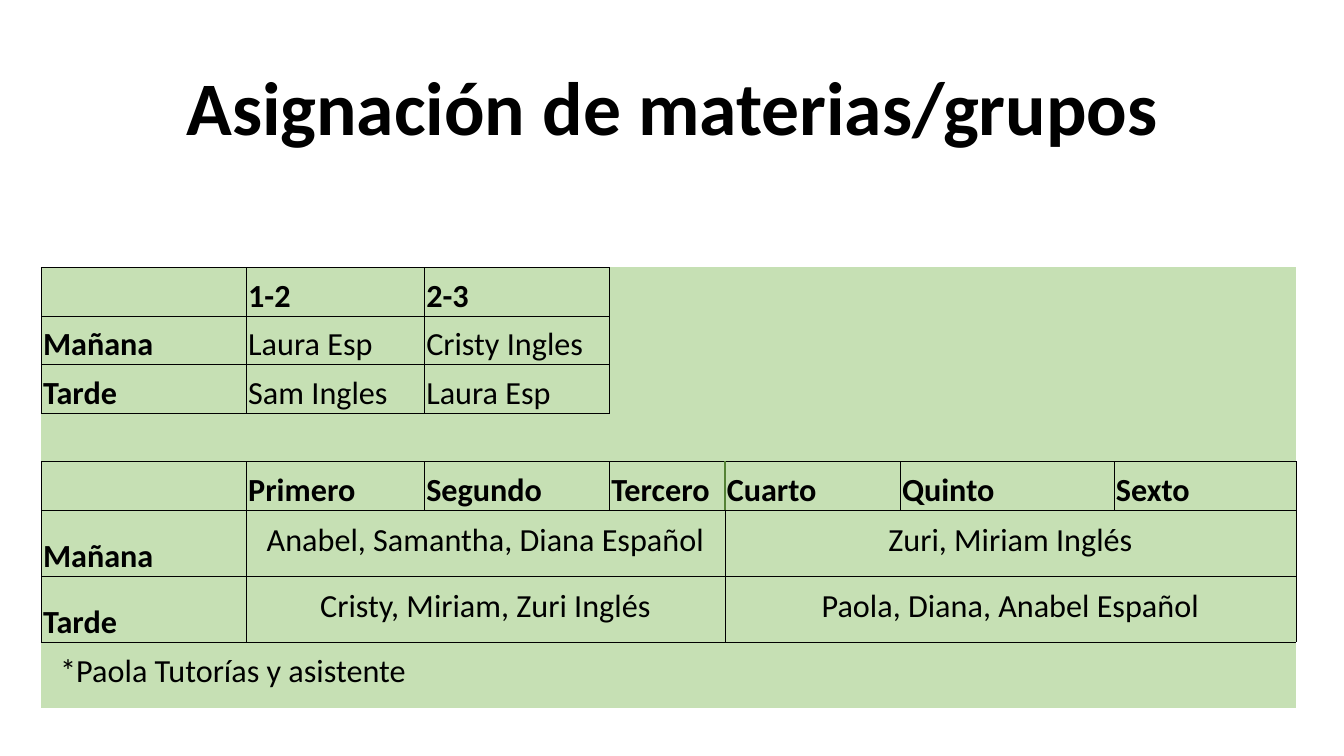
import pptx
import pptx.util
import pptx.dml.color
import pptx.enum.text
from lxml import etree
from pptx.oxml.ns import qn

Pt = pptx.util.Pt
ANCHOR = pptx.enum.text.MSO_ANCHOR
ALIGN = pptx.enum.text.PP_ALIGN

TITLE = "Asignación de materias/grupos"
SCHEDULE = [
    ["", "1-2", "2-3"],
    ["Mañana", "Laura Esp", "Cristy Ingles"],
    ["Tarde", "Sam Ingles", "Laura Esp"],
    [],
    ["", "Primero", "Segundo", "Tercero", "Cuarto", "Quinto", "Sexto"],
    ["Mañana", "Anabel, Samantha, Diana Español", "", "", "Zuri, Miriam Inglés"],
    ["Tarde", "Cristy, Miriam, Zuri Inglés", "", "", "Paola, Diana, Anabel Español"],
    ["*Paola Tutorías y asistente"],
]
COLUMN_WIDTHS = [146.5, 127.2, 132.2, 82.5, 125.2, 152.8, 130]
ROW_HEIGHTS = [34.7] * 5 + [47.1] * 3
HEADER_ROWS = (0, 4)
NOTE_ROW = 7
SPAN = 3
SPAN_STARTS = [(5, 1), (5, 4), (6, 1), (6, 4), (NOTE_ROW, 0)]
GRIDS = [(range(0, 3), range(0, 3)), (range(4, 7), range(0, 7))]
ACCENT_EDGES = {(4, 3, "lnR"), (4, 4, "lnL")}
SIDES = {"lnL": (0, -1), "lnR": (0, 1), "lnT": (-1, 0), "lnB": (1, 0)}

FONT, BLACK, GREEN, DARK_GREEN = "Calibri", "000000", "C6E0B4", "548235"


def color(value):
    return pptx.dml.color.RGBColor.from_string(value)


def style(paragraph, size, bold, align):
    paragraph.alignment = align
    font = paragraph.font
    font.name, font.size, font.bold = FONT, Pt(size), bold
    font.color.rgb = color(BLACK)


def in_grid(row, column):
    return any(row in rows and column in columns for rows, columns in GRIDS)


def draw_borders(cell, row, column):
    """Rule each side that touches a grid cell and clear the others."""
    properties = cell._tc.get_or_add_tcPr()
    for index, (side, (down, right)) in enumerate(SIDES.items()):
        line = etree.Element(qn("a:" + side))
        if in_grid(row, column) or in_grid(row + down, column + right):
            accent = (row, column, side) in ACCENT_EDGES
            line.set("w", str(int(Pt(1.5 if accent else 0.5))))
            fill = etree.SubElement(line, qn("a:solidFill"))
            etree.SubElement(fill, qn("a:srgbClr"), val=DARK_GREEN if accent else BLACK)
        else:
            line.set("w", "0")
            etree.SubElement(line, qn("a:noFill"))
        properties.insert(index, line)


def fill_cell(cell, row, column, text):
    spanning = (row, column) in SPAN_STARTS
    side, top, bottom = (13.5, 7.2, 7.2) if spanning else (1.3, 1.3, 0)
    cell.margin_left = cell.margin_right = Pt(side)
    cell.margin_top, cell.margin_bottom = Pt(top), Pt(bottom)
    cell.vertical_anchor = ANCHOR.TOP if spanning else ANCHOR.BOTTOM
    cell.fill.solid()
    cell.fill.fore_color.rgb = color(GREEN)
    cell.text = text
    bold = row in HEADER_ROWS or (column == 0 and row != NOTE_ROW)
    centred = spanning and row != NOTE_ROW
    style(cell.text_frame.paragraphs[0], 23, bold, ALIGN.CENTER if centred else ALIGN.LEFT)
    draw_borders(cell, row, column)


def add_title(slide):
    heading = slide.shapes.add_textbox(Pt(41.8), Pt(38.9), Pt(877), Pt(73.4)).text_frame
    heading.word_wrap = True
    heading.vertical_anchor = ANCHOR.BOTTOM
    heading.text = TITLE
    heading.paragraphs[0].line_spacing = 0.9
    style(heading.paragraphs[0], 54, True, ALIGN.CENTER)


def add_schedule(slide):
    schedule = slide.shapes.add_table(
        len(ROW_HEIGHTS), len(COLUMN_WIDTHS), Pt(29.5), Pt(191),
        Pt(sum(COLUMN_WIDTHS)), Pt(sum(ROW_HEIGHTS))).table
    schedule.first_row = schedule.horz_banding = False
    for column, width in enumerate(COLUMN_WIDTHS):
        schedule.columns[column].width = Pt(width)
    for row, height in enumerate(ROW_HEIGHTS):
        schedule.rows[row].height = Pt(height)
        for column in range(len(COLUMN_WIDTHS)):
            texts = SCHEDULE[row]
            text = texts[column] if column < len(texts) else ""
            fill_cell(schedule.cell(row, column), row, column, text)
    for row, column in SPAN_STARTS:
        schedule.cell(row, column).merge(schedule.cell(row, column + SPAN - 1))


def main():
    deck = pptx.Presentation()
    deck.slide_width, deck.slide_height = Pt(960), Pt(540)
    slide = deck.slides.add_slide(deck.slide_layouts[6])
    add_title(slide)
    add_schedule(slide)
    deck.save("out.pptx")


if __name__ == "__main__":
    main()
